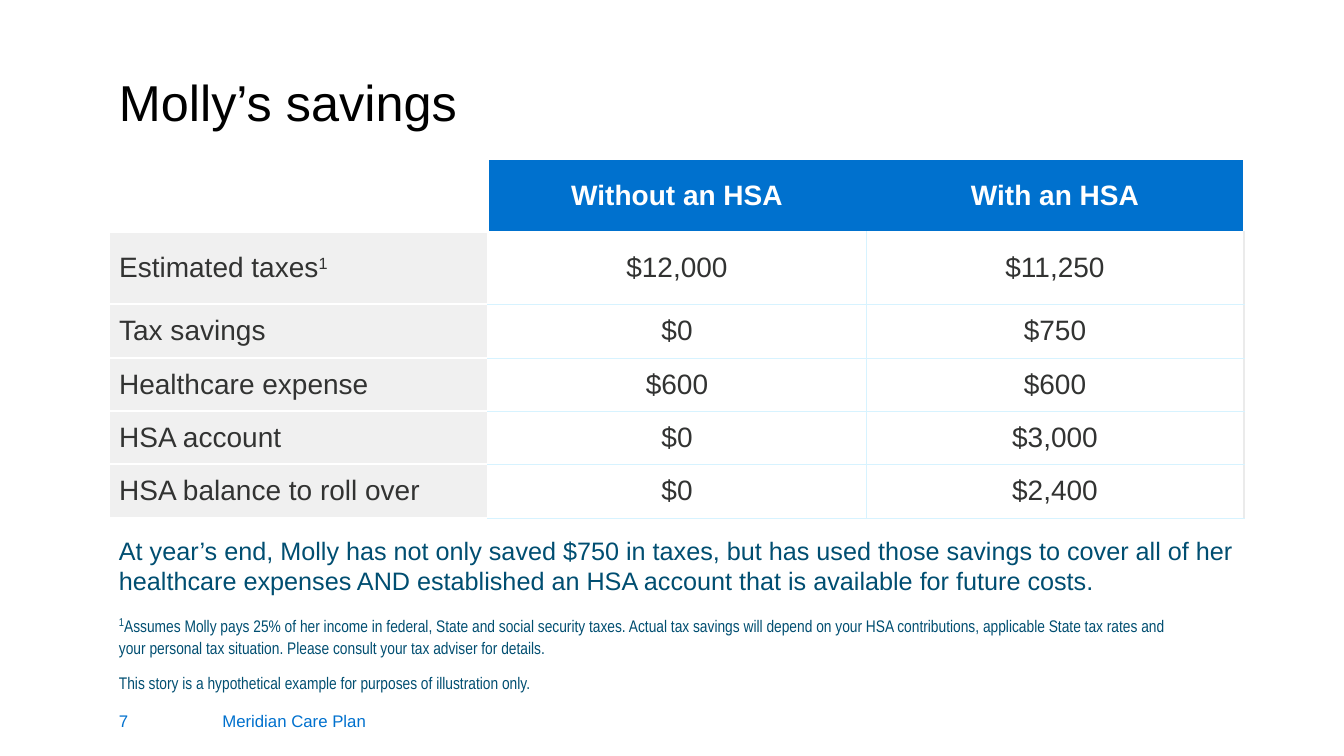
from lxml import etree
from pptx import Presentation
from pptx.dml.color import RGBColor
from pptx.enum.text import MSO_ANCHOR as ANCHOR, PP_ALIGN as ALIGN
from pptx.oxml.ns import qn
from pptx.util import Pt

PX = 914400 / 100.8
COLORS = {
    "white": "FFFFFF", "black": "000000", "blue": "0071CE", "teal": "004E71",
    "ink": "323332", "label": "F0F0F0", "rule": "D7F3FF", "edge": "EBEBEB",
}


def add_text(box, paragraphs, size, color, font="Arial", anchor=ANCHOR.TOP):
    left, top, width, height = [round(n * PX) for n in box]
    frame = slide.shapes.add_textbox(left, top, width, height).text_frame
    frame.word_wrap = True
    frame.vertical_anchor = anchor
    frame.text = "\n".join(paragraphs)
    for paragraph in frame.paragraphs:
        for run in paragraph.runs:
            style_run(run, size, color, font)
    return frame


def style_run(run, size, color, font="Arial", bold=False, raised=False):
    run.font.size = Pt(size)
    run.font.name = font
    run.font.bold = bold
    run.font.color.rgb = RGBColor.from_string(COLORS[color])
    if raised:
        run.font._element.set("baseline", "30000")


deck = Presentation()
deck.slide_width = round(1344 * PX)
deck.slide_height = round(756 * PX)
slide = deck.slides.add_slide(deck.slide_layouts[6])

footer = add_text((210, 706, 166, 30), ["Meridian Care Plan"], 12, "blue")
footer.paragraphs[0].alignment = ALIGN.RIGHT
title = add_text((109, 80, 1214, 50), ["Molly’s savings"], 36, "black", anchor=ANCHOR.MIDDLE)
title.paragraphs[0].line_spacing = 0.9
add_text((109, 701, 101, 40), ["7"], 12, "blue", anchor=ANCHOR.MIDDLE)

savings = [
    ("", "Without an HSA", "With an HSA"),
    ("Estimated taxes", "$12,000", "$11,250"),
    ("Tax savings", "$0", "$750"),
    ("Healthcare expense", "$600", "$600"),
    ("HSA account", "$0", "$3,000"),
    ("HSA balance to roll over", "$0", "$2,400"),
]
column_widths = [379, 378, 378]
row_heights = [73, 72, 54, 53, 53, 54]
table = slide.shapes.add_table(
    len(savings), len(column_widths), round(109 * PX), round(159 * PX),
    round(sum(column_widths) * PX), round(sum(row_heights) * PX)).table
table.first_row = False
table.horz_banding = False
for column, width in zip(table.columns, column_widths):
    column.width = round(width * PX)
for row, height in zip(table.rows, row_heights):
    row.height = round(height * PX)

for r, entries in enumerate(savings):
    for c, entry in enumerate(entries):
        cell = table.cell(r, c)
        header, label = r == 0, c == 0
        cell.vertical_anchor = ANCHOR.MIDDLE
        cell.text_frame.text = entry
        paragraph = cell.text_frame.paragraphs[0]
        paragraph.alignment = ALIGN.LEFT if label else ALIGN.CENTER
        for run in paragraph.runs:
            style_run(run, 20, "white" if header else "ink", bold=header)

        white = ("white", 1)
        rule = ("rule", 0.5)
        if header or label:
            borders = {"L": white, "R": white, "T": white, "B": white}
            if header and c == 1:
                borders["R"] = None
            if header and c == 2:
                borders["L"] = None
        else:
            borders = {
                "L": white if c == 1 else rule,
                "R": rule if c == 1 else ("edge", 1),
                "T": white if r == 1 else rule,
                "B": rule,
            }
        properties = cell._tc.get_or_add_tcPr()
        for side, border in borders.items():
            line = etree.SubElement(properties, qn("a:ln" + side))
            if border is None:
                line.set("w", "0")
                etree.SubElement(line, qn("a:noFill"))
            else:
                color, weight = border
                line.set("w", str(int(Pt(weight))))
                paint = etree.SubElement(line, qn("a:solidFill"))
                etree.SubElement(paint, qn("a:srgbClr"), val=COLORS[color])

        if label != header:
            cell.fill.solid()
            cell.fill.fore_color.rgb = RGBColor.from_string(COLORS["blue" if header else "label"])
        else:
            cell.fill.background()

tax_mark = table.cell(1, 0).text_frame.paragraphs[0].add_run()
tax_mark.text = "1"
style_run(tax_mark, 20, "ink", raised=True)

notes = add_text((109, 606, 1089, 77), [
    "1",
    "This story is a hypothetical example for purposes of illustration only.",
], 12, "teal", "Arial Narrow")
assumption, disclaimer = notes.paragraphs
style_run(assumption.runs[0], 14, "teal", "Arial Narrow", raised=True)
assumption_text = assumption.add_run()
assumption_text.text = (
    "Assumes Molly pays 25% of her income in federal, State and social security taxes. "
    "Actual tax savings will depend on your HSA contributions, applicable State tax rates "
    "and your personal tax situation. Please consult your tax adviser for details.")
style_run(assumption_text, 12, "teal", "Arial Narrow")
for paragraph in notes.paragraphs:
    paragraph.line_spacing = 1.07
disclaimer.space_before = Pt(10)

add_text((109, 530, 1136, 72), [
    "At year’s end, Molly has not only saved $750 in taxes, but has used those savings "
    "to cover all of her healthcare expenses AND established an HSA account that is "
    "available for future costs.",
], 18, "teal")

deck.save("out.pptx")
